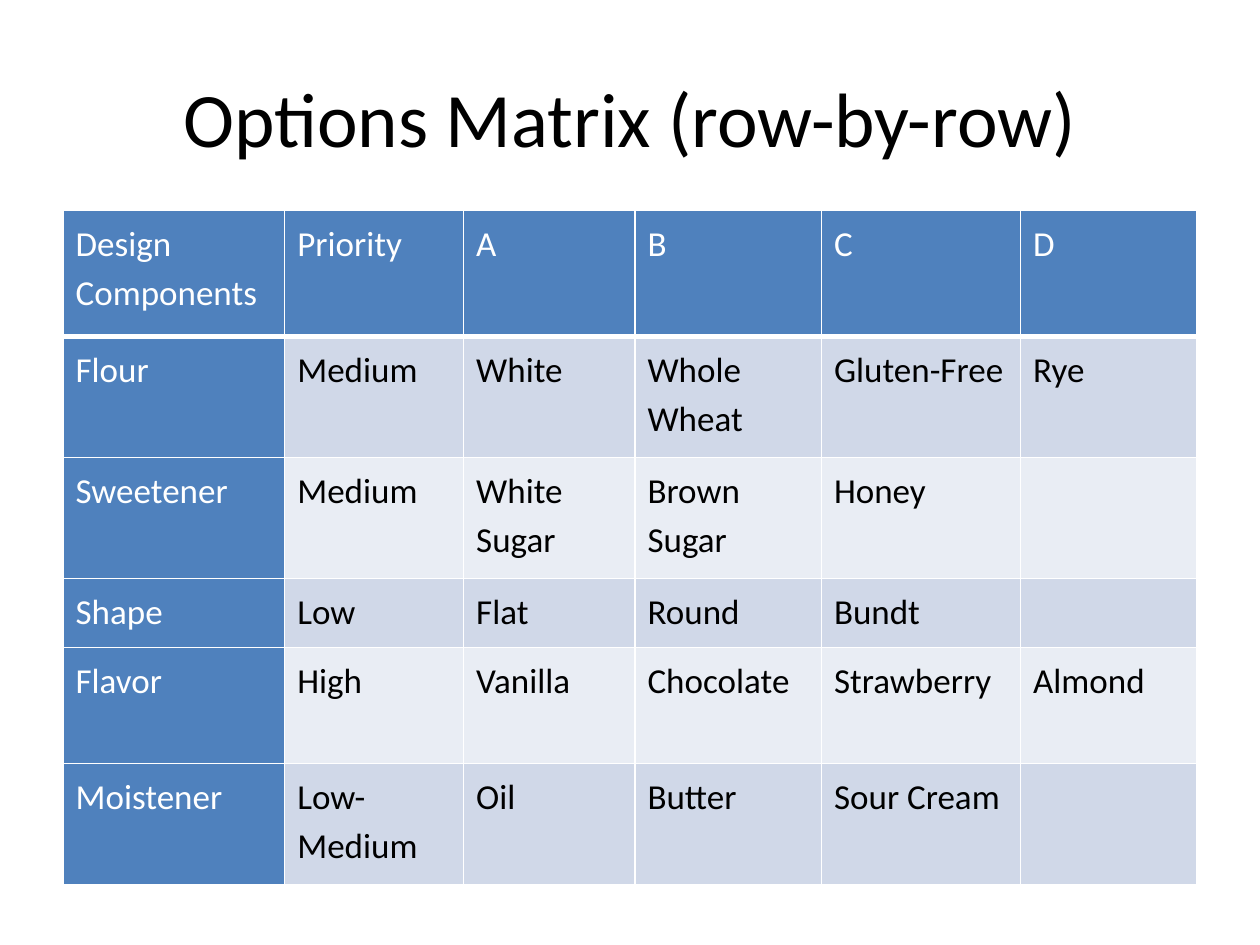
import pptx
import pptx.dml.color
import pptx.enum.text
import pptx.oxml
import pptx.oxml.ns
import pptx.util
from pptx.util import Inches

TITLE = "Options Matrix (row-by-row)"
MATRIX = [
    ["Design Components", "Priority", "A", "B", "C", "D"],
    ["Flour", "Medium", "White", "Whole Wheat", "Gluten-Free", "Rye"],
    ["Sweetener", "Medium", "White Sugar", "Brown Sugar", "Honey", ""],
    ["Shape", "Low", "Flat", "Round", "Bundt", ""],
    ["Flavor", "High", "Vanilla", "Chocolate", "Strawberry", "Almond"],
    ["Moistener", "Low-Medium", "Oil", "Butter", "Sour Cream", ""],
]
COL_WIDTHS = [1.76, 1.42, 1.36, 1.48, 1.58, 1.4]
ROW_HEIGHTS = [1, 0.96, 0.96, 0.55, 0.92, 0.96]

THEME = {
    "font": "Calibri",
    "title_size": 44,
    "cell_size": 20,
    "line_spacing": 1.15,
    "text": "000000",
    "header_text": "FFFFFF",
    "header_fill": "4F81BD",
    "bands": ["E9EDF4", "D0D8E8"],
    "border": "FFFFFF",
    "border_width": 1,
    "header_rule": 3,
}


def rgb(value):
    return pptx.dml.color.RGBColor.from_string(value)


def style(p, size, color):
    p.font.name = THEME["font"]
    p.font.size = pptx.util.Pt(size)
    p.font.bold = False
    p.font.color.rgb = rgb(color)


def set_borders(cell, widths):
    tc_pr = cell._tc.get_or_add_tcPr()
    for i, (side, width) in enumerate(widths.items()):
        line = pptx.oxml.parse_xml(
            f'<a:ln{side} {pptx.oxml.ns.nsdecls("a")} w="{pptx.util.Pt(width)}">'
            f'<a:solidFill><a:srgbClr val="{THEME["border"]}"/></a:solidFill></a:ln{side}>'
        )
        tc_pr.insert(i, line)


def fill_cell(cell, text, row, col):
    is_header = row == 0 or col == 0
    cell.fill.solid()
    cell.fill.fore_color.rgb = rgb(THEME["header_fill"] if is_header else THEME["bands"][row % 2])
    widths = dict.fromkeys("LRTB", THEME["border_width"])
    if row == 0:
        widths["B"] = THEME["header_rule"]
    elif row == 1:
        widths["T"] = THEME["header_rule"]
    set_borders(cell, widths)
    cell.text = text
    p = cell.text_frame.paragraphs[0]
    p.line_spacing = THEME["line_spacing"]
    style(p, THEME["cell_size"], THEME["header_text"] if is_header else THEME["text"])


def add_title(slide):
    title = slide.shapes.title
    title.left, title.top = Inches(0.5), Inches(0.3)
    title.width, title.height = Inches(9), Inches(1.25)
    tf = title.text_frame
    tf.text = TITLE
    tf.vertical_anchor = pptx.enum.text.MSO_ANCHOR.MIDDLE
    p = tf.paragraphs[0]
    p.alignment = pptx.enum.text.PP_ALIGN.CENTER
    style(p, THEME["title_size"], THEME["text"])


def add_matrix(slide):
    table = slide.shapes.add_table(
        len(MATRIX), len(COL_WIDTHS), Inches(0.5), Inches(1.67),
        Inches(sum(COL_WIDTHS)), Inches(sum(ROW_HEIGHTS)),
    ).table
    table.first_col = True
    for column, width in zip(table.columns, COL_WIDTHS):
        column.width = Inches(width)
    for row, height in zip(table.rows, ROW_HEIGHTS):
        row.height = Inches(height)
    for r, texts in enumerate(MATRIX):
        for c, text in enumerate(texts):
            fill_cell(table.cell(r, c), text, r, c)


def main():
    prs = pptx.Presentation()
    prs.slide_width, prs.slide_height = Inches(10), Inches(7.5)
    slide = prs.slides.add_slide(prs.slide_layouts[5])
    add_title(slide)
    add_matrix(slide)
    prs.save("out.pptx")


if __name__ == "__main__":
    main()
